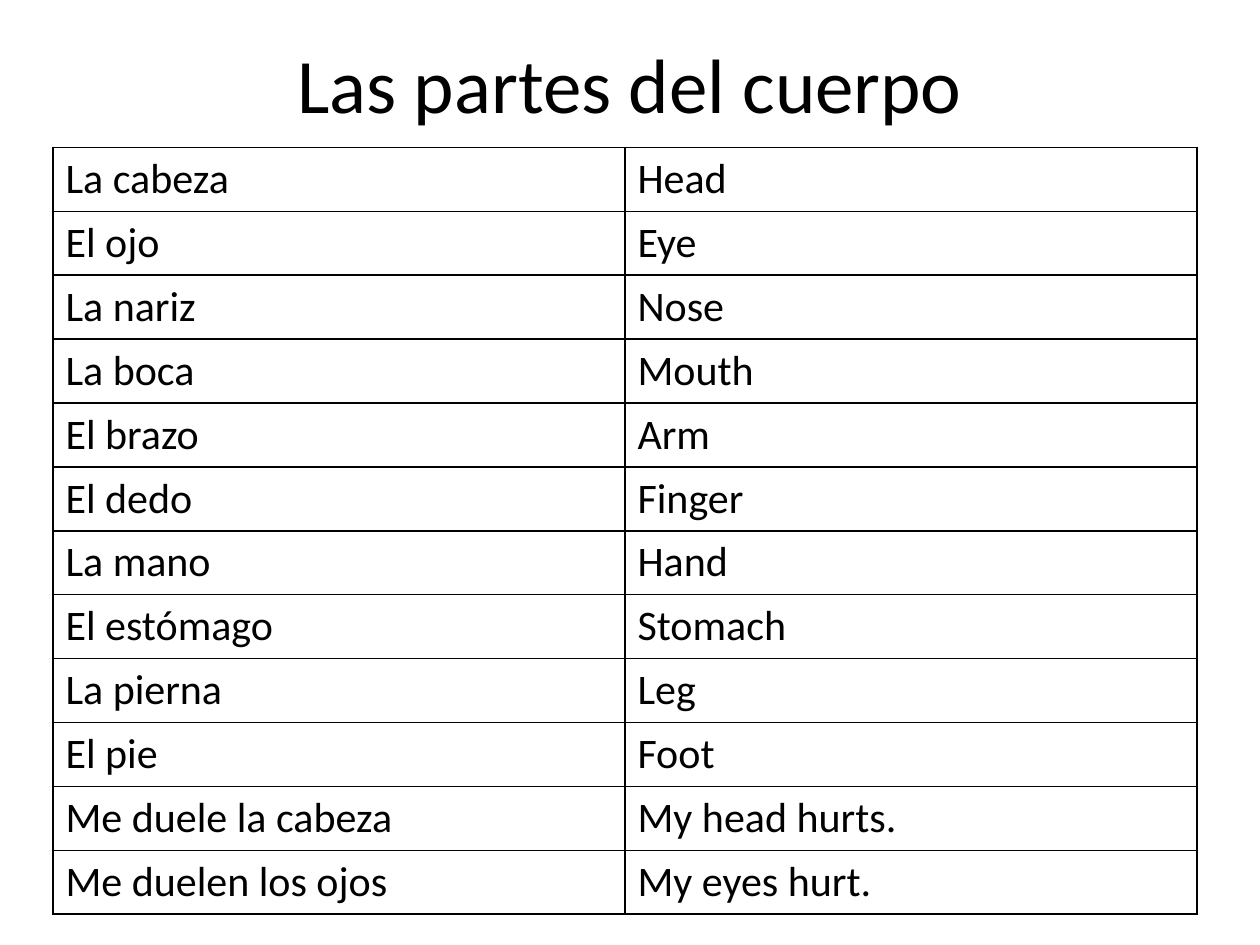
from lxml.etree import SubElement
from pptx import Presentation
from pptx.dml.color import RGBColor
from pptx.enum.text import MSO_ANCHOR, PP_ALIGN
from pptx.oxml.ns import qn
from pptx.util import Inches, Pt

BLACK, WHITE = "000000", "FFFFFF"
WORDS = [
    ("La cabeza", "Head"),
    ("El ojo", "Eye"),
    ("La nariz", "Nose"),
    ("La boca", "Mouth"),
    ("El brazo", "Arm"),
    ("El dedo", "Finger"),
    ("La mano", "Hand"),
    ("El estómago", "Stomach"),
    ("La pierna", "Leg"),
    ("El pie", "Foot"),
    ("Me duele la cabeza", "My head hurts."),
    ("Me duelen los ojos", "My eyes hurt."),
]


def style(frame, size):
    for run in frame.paragraphs[0].runs:
        run.font.name = "Calibri"
        run.font.size = Pt(size)
        run.font.bold = False
        run.font.color.rgb = RGBColor.from_string(BLACK)


def add_borders(cell):
    props = cell._tc.get_or_add_tcPr()
    for side in ("lnL", "lnR", "lnT", "lnB"):
        line = SubElement(props, qn(f"a:{side}"), w=str(Pt(1)))
        fill = SubElement(line, qn("a:solidFill"))
        SubElement(fill, qn("a:srgbClr"), val=BLACK)


deck = Presentation()
deck.slide_width, deck.slide_height = Inches(10), Inches(7.5)
slide = deck.slides.add_slide(deck.slide_layouts[5])

title = slide.shapes.title
title.left, title.top = Inches(0.5), Inches(0.17)
title.width, title.height = Inches(9), Inches(0.97)
frame = title.text_frame
frame.text = "Las partes del cuerpo"
frame.vertical_anchor = MSO_ANCHOR.MIDDLE
frame.paragraphs[0].alignment = PP_ALIGN.CENTER
style(frame, 44)

table = slide.shapes.add_table(
    len(WORDS), 2, Inches(0.42), Inches(1.17), Inches(9.08), Inches(6)
).table
table.first_row = table.horz_banding = False
for row, pair in enumerate(WORDS):
    for col, word in enumerate(pair):
        cell = table.cell(row, col)
        cell.text_frame.text = word
        style(cell.text_frame, 24)
        add_borders(cell)  # borders must come before the fill in the XML
        cell.fill.solid()
        cell.fill.fore_color.rgb = RGBColor.from_string(WHITE)

deck.save("out.pptx")
